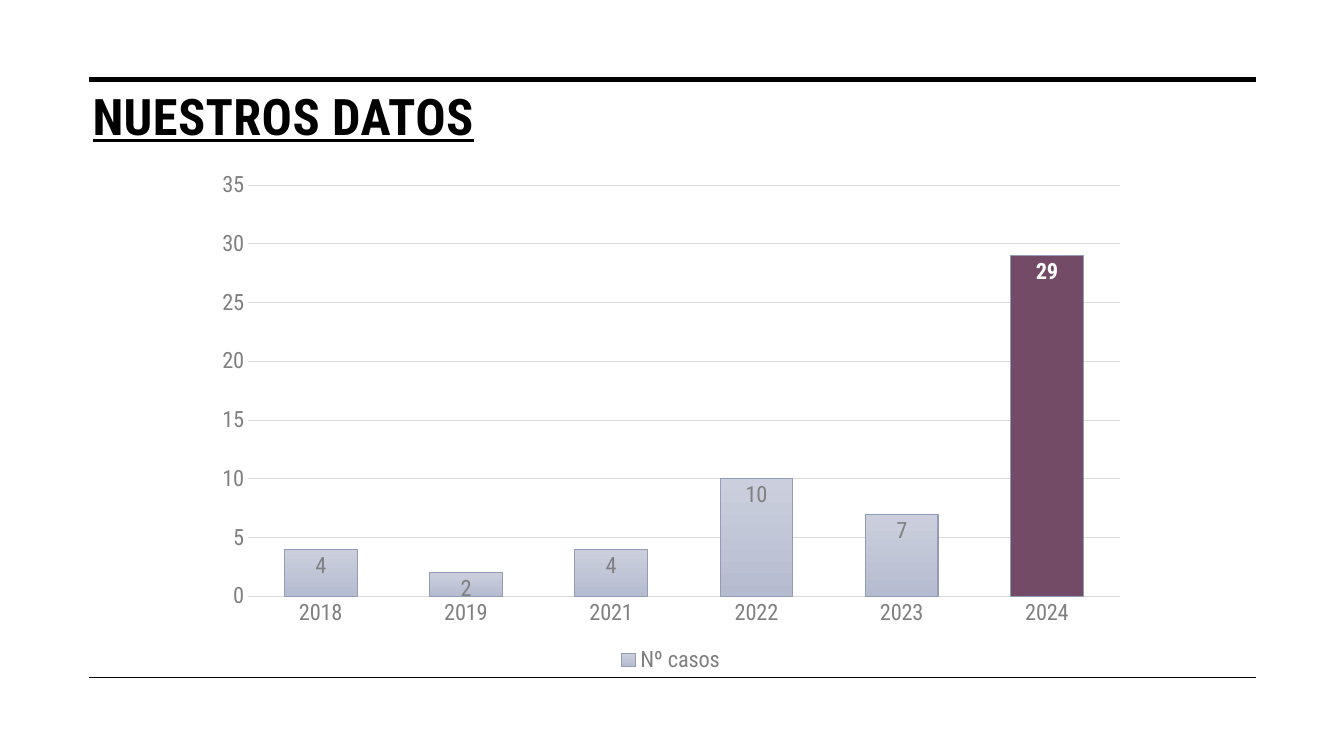
import pptx
import pptx.chart.data
import pptx.dml.color
import pptx.enum.chart
import pptx.enum.shapes
import pptx.enum.text
import pptx.oxml
import pptx.oxml.ns
import pptx.util

RGBColor = pptx.dml.color.RGBColor
BLACK = RGBColor(0x00, 0x00, 0x00)
WHITE = RGBColor(0xFF, 0xFF, 0xFF)
GRAY = RGBColor(0x80, 0x80, 0x80)
PALE = RGBColor(0xD9, 0xD9, 0xD9)
LIGHT = RGBColor(0xCB, 0xCF, 0xDD)
DARK = RGBColor(0xB6, 0xBC, 0xD0)
EDGE = RGBColor(0x92, 0x9B, 0xB7)
PLUM = RGBColor(0x73, 0x4B, 0x67)
FACE = "Roboto Condensed"
WIDE = pptx.util.Inches(13.33)
HIGH = pptx.util.Inches(7.5)
CASES = {"2018": 4, "2019": 2, "2021": 4, "2022": 10, "2023": 7, "2024": 29}


def share(left, top, width, height):
    return [round(part * side / 100)
            for part, side in zip((left, top, width, height), (WIDE, HIGH, WIDE, HIGH))]


def style(font, size, color, bold=False):
    font.name = FACE
    font.size = pptx.util.Pt(size)
    font.bold = bold
    font.color.rgb = color


def stroke(line, color, points):
    line.color.rgb = color
    line.width = pptx.util.Pt(points)


def add_frame(slide, box):
    left, top, width, height = box
    for level, points in ((top, 3.5), (top + height, 1)):
        rule = slide.shapes.add_connector(
            pptx.enum.shapes.MSO_CONNECTOR.STRAIGHT, left, level, left + width, level)
        stroke(rule.line, BLACK, points)
        props = rule._element.spPr
        props.append(pptx.oxml.parse_xml(
            "<a:effectLst %s/>" % pptx.oxml.ns.nsdecls("a")))


def add_title(slide, box, words):
    frame = slide.shapes.add_textbox(*box).text_frame
    frame.word_wrap = True
    frame.vertical_anchor = pptx.enum.text.MSO_ANCHOR.MIDDLE
    run = frame.paragraphs[0].add_run()
    run.text = words
    style(run.font, 36, BLACK, True)
    run.font.underline = True
    run._r.get_or_add_rPr().set("spc", "30")


def style_axes(chart):
    for axis in (chart.category_axis, chart.value_axis):
        axis.major_tick_mark = pptx.enum.chart.XL_TICK_MARK.NONE
        axis.minor_tick_mark = pptx.enum.chart.XL_TICK_MARK.NONE
        style(axis.tick_labels.font, 16, GRAY)
    stroke(chart.category_axis.format.line, PALE, 0.75)
    scale = chart.value_axis
    scale.minimum_scale, scale.maximum_scale, scale.major_unit = 0, 35, 5
    scale.format.line.fill.background()
    stroke(scale.major_gridlines.format.line, PALE, 0.75)


def style_bars(plot):
    plot.vary_by_categories = False
    plot.gap_width = 100
    plot.overlap = -24
    bars = plot.series[0]
    fill = bars.format.fill
    fill.gradient()
    fill.gradient_angle = 270
    for stop, color in zip(fill.gradient_stops, (LIGHT, DARK)):
        stop.color.rgb = color
    stroke(bars.format.line, EDGE, 0.75)
    inside = pptx.enum.chart.XL_LABEL_POSITION.INSIDE_END
    labels = bars.data_labels
    labels.show_value = True
    labels.position = inside
    style(labels.font, 16, GRAY)
    peak = bars.points[len(CASES) - 1]
    peak.format.fill.solid()
    peak.format.fill.fore_color.rgb = PLUM
    stroke(peak.format.line, EDGE, 0.75)
    style(peak.data_label.font, 16, WHITE, True)
    peak.data_label.position = inside


def add_bars(slide, box):
    data = pptx.chart.data.CategoryChartData()
    data.categories = list(CASES)
    data.add_series("Nº casos", list(CASES.values()))
    chart = slide.shapes.add_chart(
        pptx.enum.chart.XL_CHART_TYPE.COLUMN_CLUSTERED, *box, data).chart
    chart.has_title = False
    style(chart.font, 16, BLACK)
    chart.has_legend = True
    chart.legend.position = pptx.enum.chart.XL_LEGEND_POSITION.BOTTOM
    chart.legend.include_in_layout = False
    style(chart.legend.font, 16, GRAY)
    style_axes(chart)
    style_bars(chart.plots[0])


def main():
    deck = pptx.Presentation()
    deck.slide_width, deck.slide_height = WIDE, HIGH
    slide = deck.slides.add_slide(deck.slide_layouts[6])
    add_frame(slide, share(6.6, 10.53, 86.87, 79.07))
    add_title(slide, share(6.15, 10.27, 87.7, 10), "NUESTROS DATOS")
    add_bars(slide, share(15.15, 21.47, 69.54, 68.13))
    deck.save("out.pptx")


if __name__ == "__main__":
    main()
